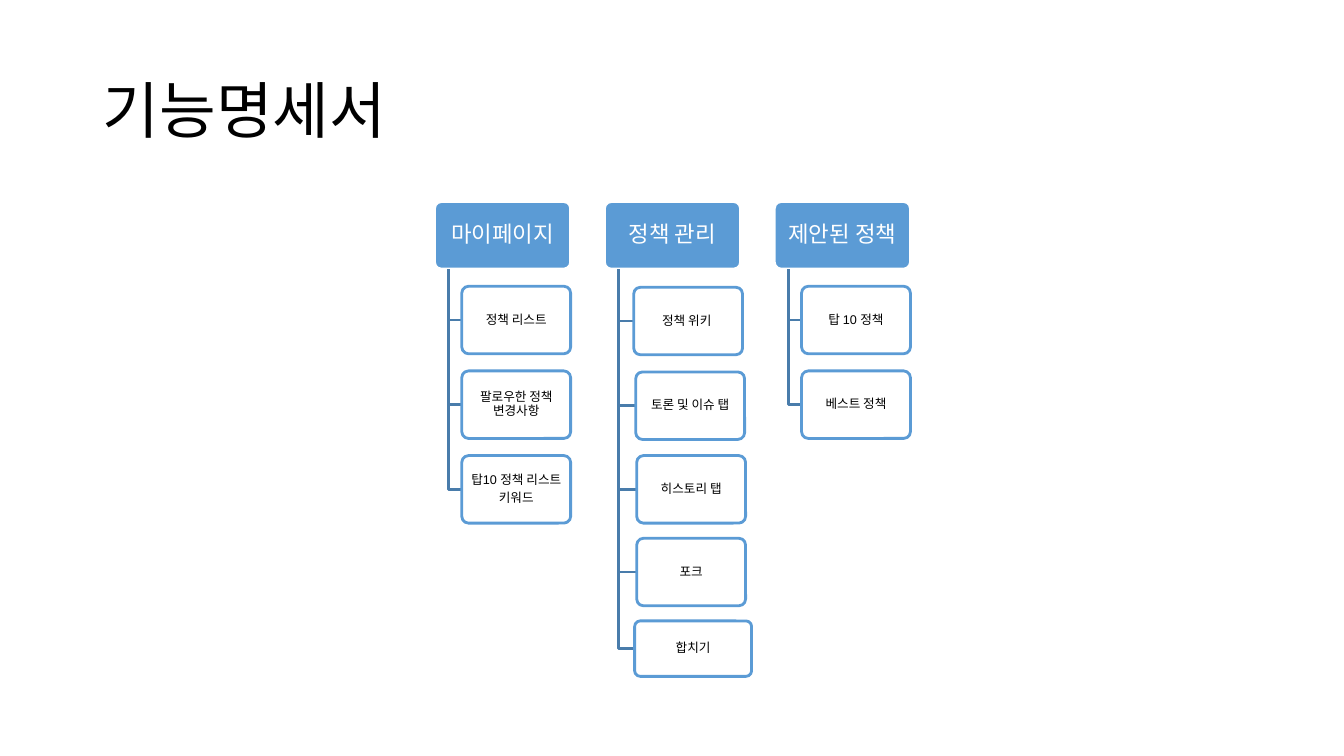
from dataclasses import dataclass

from lxml import etree
from pptx import Presentation
from pptx import util as u
from pptx.dml.color import RGBColor
from pptx.enum import shapes, text
from pptx.oxml.ns import qn


@dataclass(frozen=True)
class Theme:
    """Colours, fonts and type sizes."""
    blue: RGBColor = RGBColor(0x5B, 0x9B, 0xD5)
    trunk: RGBColor = RGBColor(0x49, 0x7C, 0xAB)
    white: RGBColor = RGBColor(0xFF, 0xFF, 0xFF)
    black: RGBColor = RGBColor(0, 0, 0)
    latin: str = "Arial"
    korean: str = "Noto Sans CJK KR"
    title: int = 44
    head: int = 16
    item: int = 9
    line: int = 2


@dataclass(frozen=True)
class Box:
    """A region in inches."""
    left: float
    top: float
    width: float
    height: float

    def lengths(self):
        """Return the four edges as lengths."""
        return [u.Inches(side) for side in (self.left, self.top, self.width, self.height)]


@dataclass(frozen=True)
class Item:
    """A feature and its place within its column."""
    label: str
    indent: float = 0.27
    nudge: float = 0
    width: float = 1.08
    height: float = 0.67


THEME = Theme()
CHART = Box(4.31, 2, 4.72, 4.71)
COLUMN_STEP = 1.685
HEAD_WIDTH, HEAD_HEIGHT = 1.35, 0.67
FIRST_ITEM, ITEM_STEP = 0.84, 0.84
TRUNK_INDENT = 0.14
FEATURES = {
    "마이페이지": [
        Item("정책 리스트"),
        Item("팔로우한 정책 변경사항"),
        Item("탑10 정책 리스트\n키워드"),
    ],
    "정책 관리": [
        Item("정책 위키 ", 0.29, 0.01),
        Item("토론 및 이슈 탭", 0.31, 0.01),
        Item("히스토리 탭", 0.32),
        Item("포크", 0.32, -0.02),
        Item("합치기", 0.3, -0.04, 1.16, 0.55),
    ],
    "제안된 정책": [Item("탑 10 정책"), Item("베스트 정책")],
}


def apply(target, values):
    """Set each named attribute on the target."""
    for name, value in values.items():
        setattr(target, name, value)


def write(frame, label, size, colour, font, frame_format, para_format):
    """Fill a text frame with formatted paragraphs."""
    apply(frame, {"word_wrap": True, "vertical_anchor": text.MSO_ANCHOR.MIDDLE, **frame_format})
    frame.text = label
    for para in frame.paragraphs:
        apply(para, {"line_spacing": 0.9, **para_format})
        for span in para.runs:
            apply(span.font, {"name": font, "size": u.Pt(size)})
            span.font.color.rgb = colour
            east_asian = etree.Element(qn("a:ea"), typeface=THEME.korean)
            span.font._element.find(qn("a:latin")).addnext(east_asian)


def add_title(page, box):
    """Place the page title in its placeholder."""
    title = page.shapes.title
    apply(title, dict(zip(("left", "top", "width", "height"), box.lengths())))
    write(title.text_frame, "기능명세서", THEME.title, THEME.black, THEME.korean,
          {"auto_size": text.MSO_AUTO_SIZE.NONE}, {"alignment": text.PP_ALIGN.LEFT})


def add_card(page, box, label, size, fill, line, colour):
    """Draw a rounded card with a centred label."""
    card = page.shapes.add_shape(shapes.MSO_SHAPE.ROUNDED_RECTANGLE, *box.lengths())
    card.adjustments[0] = 0.1
    card.shadow.inherit = False
    card.fill.solid()
    card.fill.fore_color.rgb = fill
    card.line.color.rgb = line
    card.line.width = u.Pt(THEME.line)
    write(card.text_frame, label, size, colour, THEME.latin,
          {"margin_left": u.Inches(0.02), "margin_right": u.Inches(0.02),
           "margin_top": u.Inches(0.01), "margin_bottom": u.Inches(0.01)},
          {"alignment": text.PP_ALIGN.CENTER, "space_after": u.Pt(round(size * 0.35))})


def add_branch(page, box):
    """Draw an elbow down the left of the box and along its bottom."""
    left, top, width, height = box.lengths()
    builder = page.shapes.build_freeform(left, top)
    builder.add_line_segments([(left, top + height), (left + width, top + height)], close=False)
    branch = builder.convert_to_shape()
    branch.shadow.inherit = False
    branch.fill.background()
    branch.line.color.rgb = THEME.trunk
    branch.line.width = u.Pt(THEME.line)


def add_column(page, box, heading, items):
    """Draw a heading with its features hanging below it."""
    head = Box(box.left, box.top, box.width, HEAD_HEIGHT)
    add_card(page, head, heading, THEME.head, THEME.blue, THEME.white, THEME.white)
    for row, item in enumerate(items):
        top = box.top + FIRST_ITEM + row * ITEM_STEP + item.nudge
        trunk_top = box.top + HEAD_HEIGHT
        add_branch(page, Box(box.left + TRUNK_INDENT, trunk_top, item.indent - TRUNK_INDENT,
                             top + item.height / 2 - trunk_top))
        card = Box(box.left + item.indent, top, item.width, item.height)
        add_card(page, card, item.label, THEME.item, THEME.white, THEME.blue, THEME.black)


def add_feature_chart(page, box):
    """Lay the feature columns out across the box."""
    for number, (heading, items) in enumerate(FEATURES.items()):
        column = Box(box.left + number * COLUMN_STEP, box.top, HEAD_WIDTH, box.height)
        add_column(page, column, heading, items)


def main():
    """Build and save the deck."""
    deck = Presentation()
    apply(deck, {"slide_width": u.Inches(13.33), "slide_height": u.Inches(7.5)})
    page = deck.slides.add_slide(deck.slide_layouts.get_by_name("Title Only"))
    add_title(page, Box(0.92, 0.4, 11.5, 1.45))
    add_feature_chart(page, CHART)
    deck.save("out.pptx")


if __name__ == "__main__":
    main()
